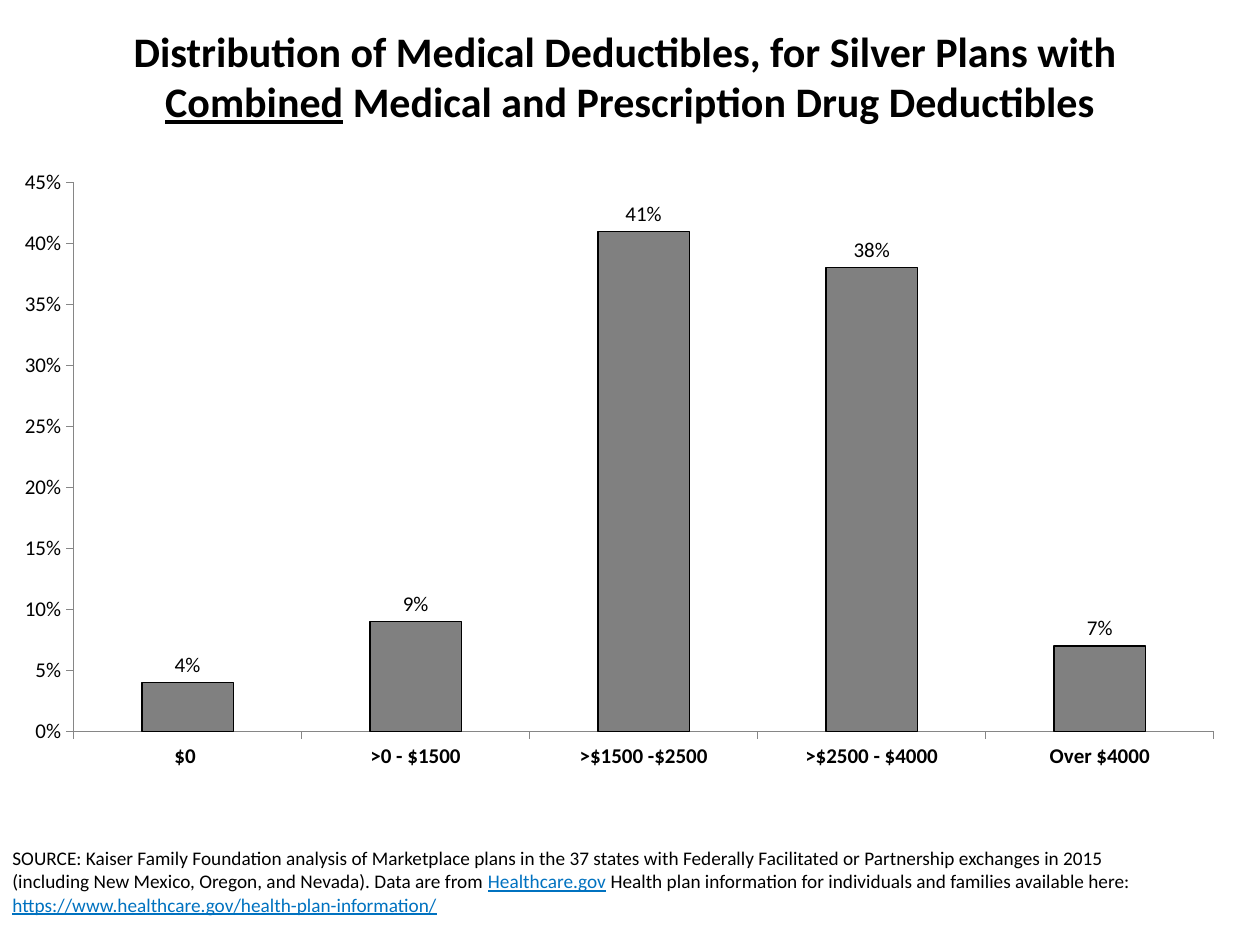
from pptx import Presentation
from pptx.chart.data import CategoryChartData
from pptx.dml.color import RGBColor
from pptx.enum.chart import XL_CHART_TYPE, XL_LABEL_POSITION, XL_TICK_MARK
from pptx.enum.text import MSO_ANCHOR, PP_ALIGN
from pptx.util import Inches, Pt

FONT = "Calibri"
COLORS = {"text": "000000", "link": "0072C0", "bar": "808080", "axis": "868686"}

# Each run is (text, colour, underlined)
TITLE_LINES = [
    [("Distribution of Medical Deductibles, for Silver Plans with ", "text", False)],
    [("Combined", "text", True),
     (" Medical and Prescription Drug Deductibles", "text", False)],
]
SOURCE_LINES = [[
    ("SOURCE: Kaiser Family Foundation analysis of Marketplace plans in the 37 states "
     "with Federally Facilitated or Partnership exchanges in 2015 (including New Mexico, "
     "Oregon, and Nevada). Data are from ", "text", False),
    ("Healthcare.gov", "link", True),
    (" Health plan information for individuals and families available here: ", "text", False),
    ("https://www.healthcare.gov/health-plan-information/", "link", True),
]]
DEDUCTIBLE_SHARES = {
    "$0 ": 0.04,
    ">0 - $1500": 0.09,
    ">$1500 -$2500": 0.41,
    ">$2500 - $4000": 0.38,
    "Over $4000": 0.07,
}


def rgb(name):
    return RGBColor.from_string(COLORS[name])


def style(font, size, color="text", bold=False):
    font.name, font.size, font.bold = FONT, Pt(size), bold
    font.color.rgb = rgb(color)


def add_text(slide, box, lines, size, bold=False, align=PP_ALIGN.LEFT, anchor=MSO_ANCHOR.TOP):
    """Add one paragraph whose lines are parted by line breaks."""
    frame = slide.shapes.add_textbox(*map(Inches, box)).text_frame
    frame.word_wrap = True
    frame.vertical_anchor = anchor
    paragraph = frame.paragraphs[0]
    paragraph.alignment = align
    for index, line in enumerate(lines):
        if index:
            paragraph.add_line_break()
        for text, color, underlined in line:
            run = paragraph.add_run()
            run.text = text
            style(run.font, size, color, bold)
            run.font.underline = underlined


def add_share_chart(slide, box):
    shares = CategoryChartData(number_format="0%")
    shares.categories = list(DEDUCTIBLE_SHARES)
    shares.add_series("Series 1", list(DEDUCTIBLE_SHARES.values()))
    chart = slide.shapes.add_chart(
        XL_CHART_TYPE.COLUMN_CLUSTERED, *map(Inches, box), shares).chart
    chart.has_legend = chart.has_title = False
    style(chart.font, 18)

    for axis, bold in ((chart.category_axis, True), (chart.value_axis, False)):
        axis.has_major_gridlines = False
        axis.major_tick_mark = XL_TICK_MARK.OUTSIDE
        axis.minor_tick_mark = XL_TICK_MARK.NONE
        axis.format.line.color.rgb = rgb("axis")
        axis.format.line.width = Pt(0.75)
        style(axis.tick_labels.font, 12, bold=bold)
    scale = chart.value_axis
    scale.minimum_scale, scale.maximum_scale, scale.major_unit = 0, 0.45, 0.05
    scale.tick_labels.number_format = "0%"
    scale.tick_labels.number_format_is_linked = False

    plot = chart.plots[0]
    plot.gap_width = 150
    plot.vary_by_categories = False
    bars = plot.series[0]
    bars.format.fill.solid()
    bars.format.fill.fore_color.rgb = rgb("bar")
    bars.format.line.color.rgb = rgb("text")
    bars.format.line.width = Pt(0.75)
    labels = bars.data_labels
    labels.show_value = True
    labels.position = XL_LABEL_POSITION.OUTSIDE_END
    labels.number_format = "0%"
    labels.number_format_is_linked = False
    style(labels.font, 12)


def main():
    deck = Presentation()
    deck.slide_width, deck.slide_height = Inches(10), Inches(7.5)
    slide = deck.slides.add_slide(deck.slide_layouts[6])
    add_text(slide, (0, 6.67, 9.25, 0.84), SOURCE_LINES, 11)
    add_text(slide, (0.1, 0.1, 9.8, 1), TITLE_LINES, 24, bold=True,
             align=PP_ALIGN.CENTER, anchor=MSO_ANCHOR.MIDDLE)
    add_share_chart(slide, (0, 1.25, 9.83, 4.95))
    deck.save("out.pptx")


if __name__ == "__main__":
    main()
